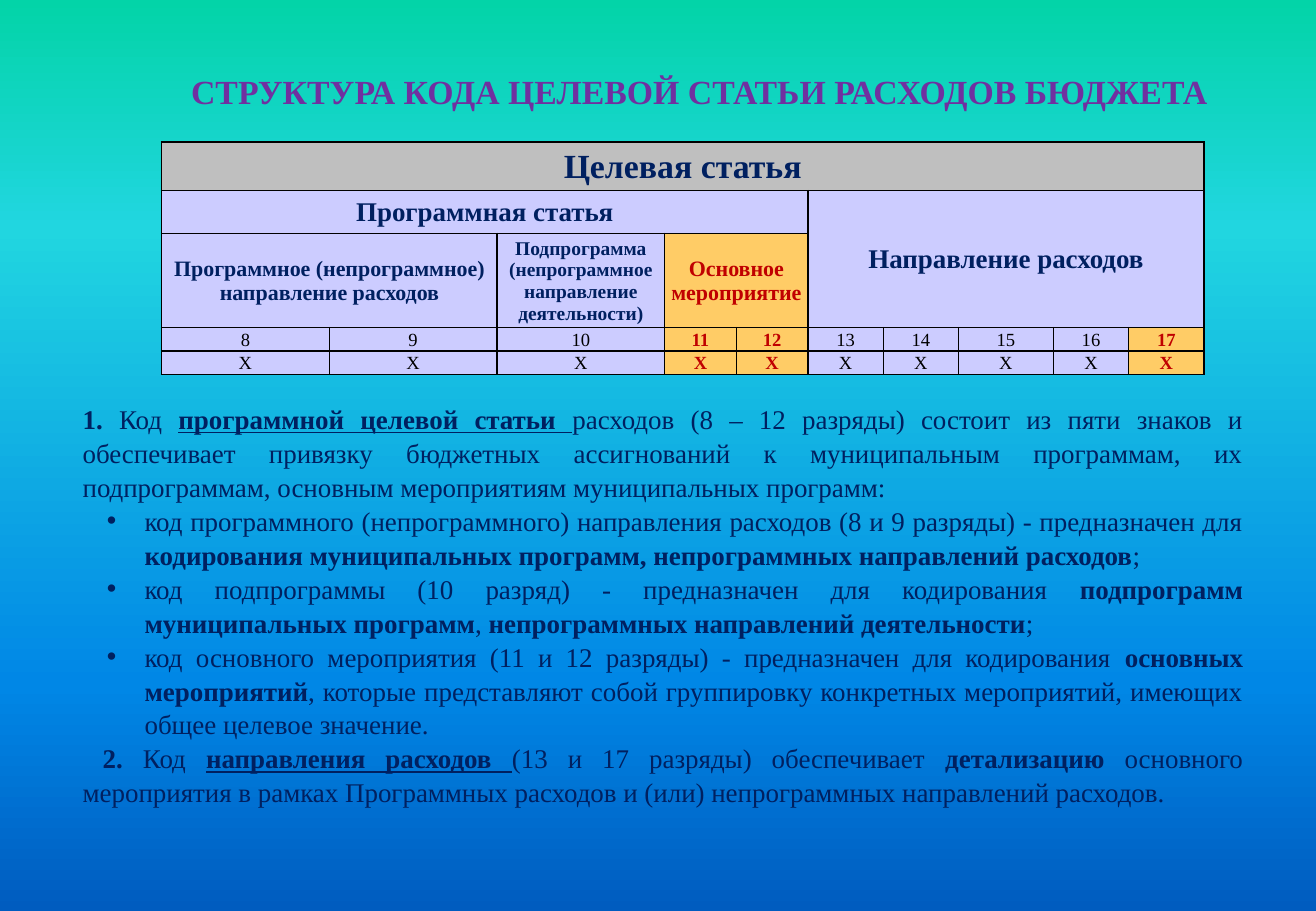
from dataclasses import dataclass

from lxml import etree
from pptx import Presentation
from pptx.dml.color import RGBColor
from pptx.enum import text
from pptx.oxml import ns
from pptx.util import Inches, Pt

FONT = "Times New Roman"
PURPLE = RGBColor(0x70, 0x30, 0xA0)
NAVY = RGBColor(0x00, 0x20, 0x60)
RED = RGBColor(0xC0, 0x00, 0x00)
BLACK = RGBColor(0x00, 0x00, 0x00)
GREY = RGBColor(0xBF, 0xBF, 0xBF)
LILAC = RGBColor(0xCC, 0xCC, 0xFF)
ORANGE = RGBColor(0xFF, 0xCC, 0x66)
GRADIENT = [
    (0, RGBColor(0x03, 0xD4, 0xA8)),
    (25, RGBColor(0x21, 0xD6, 0xE0)),
    (75, RGBColor(0x00, 0x87, 0xE6)),
    (100, RGBColor(0x00, 0x5C, 0xBF)),
]

COLUMNS = [1.38, 1.38, 1.38, 0.59, 0.59, 0.62, 0.62, 0.78, 0.62, 0.62]
ROWS = [0.4, 0.35, 0.72, 0.18, 0.18]
FIRST_DIGIT = 8
MARKED_DIGITS = {11, 12, 17}


@dataclass
class Cell:
    row: int
    col: int
    label: str
    size: float
    fill: RGBColor = LILAC
    color: RGBColor = NAVY
    bold: bool = True
    rows: int = 1
    cols: int = 1


@dataclass
class Run:
    words: str
    bold: bool = False
    underline: bool = False


@dataclass
class Para:
    runs: list[Run]
    bullet: bool = False


HEADERS = [
    Cell(0, 0, "Целевая статья", 20, GREY, cols=10),
    Cell(1, 0, "Программная статья", 16, cols=5),
    Cell(1, 5, "Направление расходов", 16, rows=2, cols=5),
    Cell(2, 0, "Программное (непрограммное) направление расходов", 13, cols=2),
    Cell(2, 2, "Подпрограмма (непрограммное направление деятельности)", 11.5),
    Cell(2, 3, "Основное мероприятие", 13, ORANGE, RED, cols=2),
]

BODY = [
    Para([
        Run("1. ", True), Run("Код "),
        Run("программной целевой статьи ", True, True),
        Run("расходов (8 – 12 разряды) состоит из пяти знаков и обеспечивает "
            "привязку бюджетных ассигнований к муниципальным программам, их "
            "подпрограммам, основным мероприятиям муниципальных программ:"),
    ]),
    Para([
        Run("код программного (непрограммного) направления расходов "
            "(8 и 9 разряды) - предназначен для "),
        Run("кодирования муниципальных программ, "
            "непрограммных направлений расходов", True),
        Run(";"),
    ], True),
    Para([
        Run("код подпрограммы (10 разряд) - предназначен для кодирования "),
        Run("подпрограмм муниципальных программ", True), Run(", "),
        Run("непрограммных направлений деятельности", True), Run(";"),
    ], True),
    Para([
        Run("код основного мероприятия (11 и 12 разряды) - "
            "предназначен для кодирования "),
        Run("основных мероприятий", True),
        Run(", которые представляют собой группировку конкретных "
            "мероприятий, имеющих общее целевое значение."),
    ], True),
    Para([
        Run(" 2. ", True), Run("Код "),
        Run("направления расходов ", True, True),
        Run("(13 и 17 разряды) обеспечивает "), Run("детализацию", True),
        Run(" основного мероприятия в рамках Программных расходов "
            "и (или) непрограммных направлений расходов."),
    ]),
]


def place(sp, left: float, top: float, width: float, height: float) -> None:
    sp.left, sp.top = Inches(left), Inches(top)
    sp.width, sp.height = Inches(width), Inches(height)


def set_font(p, size: float, color: RGBColor, bold: bool = False) -> None:
    p.font.name, p.font.size, p.font.bold = FONT, Pt(size), bold
    p.font.color.rgb = color


def set_background(s) -> None:
    fill = s.background.fill
    fill.gradient()
    fill.gradient_angle = 270
    stops = s.background._cSld.find(".//" + ns.qn("a:gsLst"))
    for old in list(stops):
        stops.remove(old)
    for position, color in GRADIENT:
        gs = etree.SubElement(stops, ns.qn("a:gs"), pos=str(position * 1000))
        etree.SubElement(gs, ns.qn("a:srgbClr"), val=str(color))


def set_borders(cell) -> None:
    tc_pr = cell._tc.get_or_add_tcPr()
    for i, side in enumerate(("lnL", "lnR", "lnT", "lnB")):
        ln = etree.Element(ns.qn("a:" + side), w=str(Pt(1)))
        solid = etree.SubElement(ln, ns.qn("a:solidFill"))
        etree.SubElement(solid, ns.qn("a:srgbClr"), val=str(BLACK))
        tc_pr.insert(i, ln)


def add_code_table(s, cells: list[Cell]) -> None:
    frame = s.shapes.add_table(len(ROWS), len(COLUMNS), Inches(1.33), Inches(1.17),
                               Inches(sum(COLUMNS)), Inches(sum(ROWS)))
    table = frame.table
    table.first_row = table.horz_banding = False
    for column, width in zip(table.columns, COLUMNS):
        column.width = Inches(width)
    for row, height in zip(table.rows, ROWS):
        row.height = Inches(height)
    for cell in table.iter_cells():
        cell.margin_left = cell.margin_right = cell.margin_top = Inches(0.01)
        cell.margin_bottom = 0
        set_borders(cell)
    for item in cells:
        cell = table.cell(item.row, item.col)
        if item.rows * item.cols > 1:
            cell.merge(table.cell(item.row + item.rows - 1,
                                  item.col + item.cols - 1))
        cell.fill.solid()
        cell.fill.fore_color.rgb = item.fill
        cell.vertical_anchor = text.MSO_ANCHOR.MIDDLE
        cell.text = item.label
        p = cell.text_frame.paragraphs[0]
        p.alignment = text.PP_ALIGN.CENTER
        set_font(p, item.size, item.color, item.bold)


def add_para(p, para: Para) -> None:
    p.alignment = text.PP_ALIGN.JUSTIFY
    p.space_before = Pt(0)
    p.line_spacing = 1.05
    p_pr = p._p.get_or_add_pPr()
    p_pr.set("marL", str(Inches(0.51 if para.bullet else 0)))
    p_pr.set("indent", str(Inches(-0.31 if para.bullet else 0)))
    if para.bullet:
        etree.SubElement(p_pr, ns.qn("a:buChar"), char="•")
    else:
        etree.SubElement(p_pr, ns.qn("a:buNone"))
    set_font(p, 16, NAVY)
    for run in para.runs:
        r = p.add_run()
        r.text = run.words
        r.font.bold, r.font.underline = run.bold, run.underline


def main() -> None:
    prs = Presentation()
    prs.slide_width, prs.slide_height = Inches(10.83), Inches(7.5)
    s = prs.slides.add_slide(prs.slide_layouts[1])
    set_background(s)

    # Title
    title = s.shapes.title
    place(title, 0.92, 0.58, 9.67, 0.94)
    tf = title.text_frame
    tf.text = "СТРУКТУРА КОДА ЦЕЛЕВОЙ СТАТЬИ РАСХОДОВ БЮДЖЕТА"
    tf.auto_size = text.MSO_AUTO_SIZE.NONE
    tf.vertical_anchor = text.MSO_ANCHOR.TOP
    tf.margin_left = tf.margin_right = tf.margin_top = tf.margin_bottom = 0
    tf.paragraphs[0].alignment = text.PP_ALIGN.CENTER
    set_font(tf.paragraphs[0], 20, PURPLE, True)

    # Code structure table: headers, then digit numbers and their marks
    digits = []
    for col in range(len(COLUMNS)):
        digit = FIRST_DIGIT + col
        marked = digit in MARKED_DIGITS
        fill, color = (ORANGE, RED) if marked else (LILAC, BLACK)
        digits += [Cell(row, col, label, 11, fill, color, marked)
                   for row, label in ((3, str(digit)), (4, "Х"))]
    add_code_table(s, HEADERS + digits)

    # Explanation of the code
    body = s.placeholders[1]
    place(body, 0.58, 3.25, 9.75, 3.57)
    tf = body.text_frame
    tf.auto_size = text.MSO_AUTO_SIZE.SHAPE_TO_FIT_TEXT
    for i, para in enumerate(BODY):
        add_para(tf.add_paragraph() if i else tf.paragraphs[0], para)

    prs.save("out.pptx")


if __name__ == "__main__":
    main()
